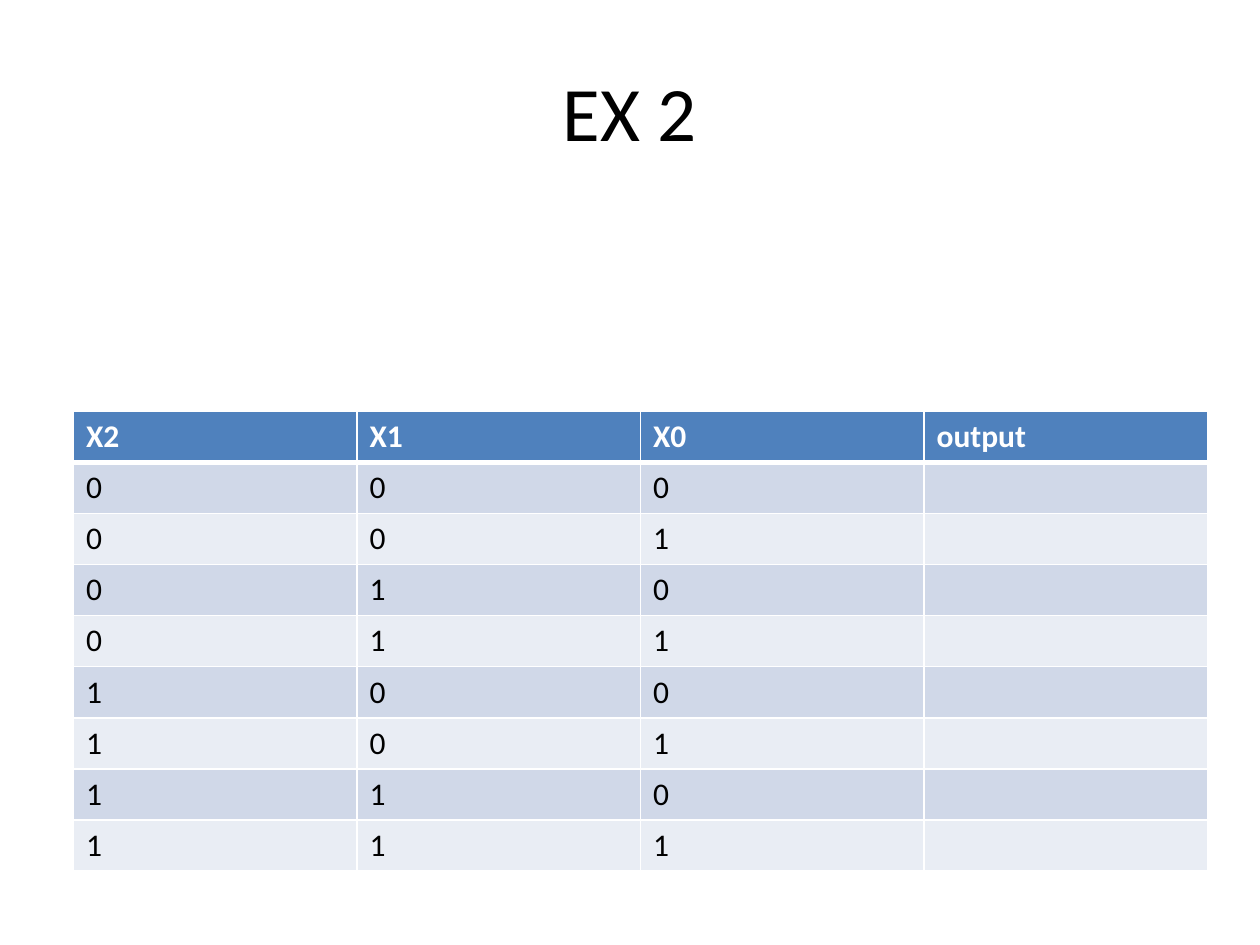
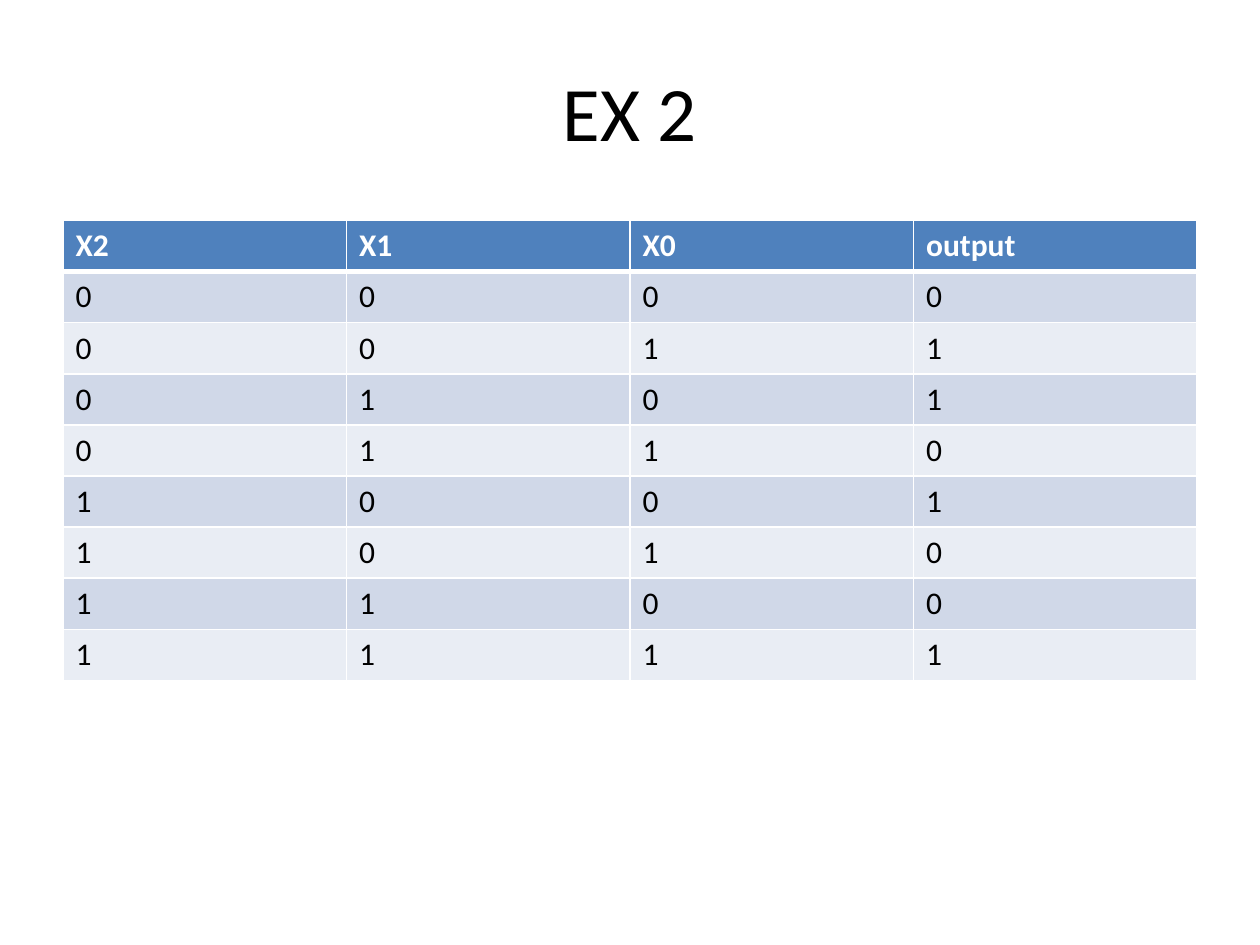
from dataclasses import dataclass
from itertools import product

from lxml import etree
from pptx import Presentation
from pptx.dml.color import RGBColor
from pptx.enum import text
from pptx.oxml import ns
from pptx.util import Pt


@dataclass(frozen=True)
class Theme:
    font: str = "Calibri"
    ink: str = "000000"
    paper: str = "FFFFFF"
    header: str = "4F81BD"
    bands: tuple = ("D0D8E8", "E9EDF4")
    title_size: float = 44
    cell_size: float = 18
    rule: float = 1
    header_rule: float = 3


class Deck:
    """Holds the theme and the slide being filled."""

    def __init__(self, theme):
        self.theme = theme
        self.prs = Presentation()
        self.prs.slide_width, self.prs.slide_height = Pt(720), Pt(540)
        self.slide = None

    def add_slide(self):
        self.slide = self.prs.slides.add_slide(self.prs.slide_layouts[6])

    def add_words(self, paragraph, words, size, color, bold=False):
        run = paragraph.add_run()
        run.text = words
        style = {"name": self.theme.font, "size": Pt(size), "bold": bold}
        for key, value in style.items():
            setattr(run.font, key, value)
        run.font.color.rgb = RGBColor.from_string(color)

    def title(self, words):
        heading = self.slide.shapes.add_textbox(Pt(36), Pt(18), Pt(648), Pt(90))
        frame = heading.text_frame
        layout = {"word_wrap": True, "vertical_anchor": text.MSO_ANCHOR.MIDDLE}
        for key, value in layout.items():
            setattr(frame, key, value)
        paragraph = frame.paragraphs[0]
        paragraph.alignment = text.PP_ALIGN.CENTER
        self.add_words(paragraph, words, self.theme.title_size, self.theme.ink)

    def border(self, cell, side, width):
        line = etree.SubElement(cell._tc.get_or_add_tcPr(), ns.qn(f"a:ln{side}"), w=str(Pt(width)))
        fill = etree.SubElement(line, ns.qn("a:solidFill"))
        etree.SubElement(fill, ns.qn("a:srgbClr"), val=self.theme.paper)

    def table(self, rows, left, top, column_width=162, row_height=29.2):
        """Draw rows of strings; the first row is the header."""
        theme = self.theme
        columns = len(rows[0])
        grid = self.slide.shapes.add_table(
            len(rows), columns, Pt(left), Pt(top),
            Pt(column_width * columns), Pt(row_height * len(rows))).table
        for row in grid.rows:
            row.height = Pt(row_height)
        for r, c in product(range(len(rows)), range(columns)):
            cell, is_header = grid.cell(r, c), r == 0
            widths = {"L": theme.rule, "R": theme.rule,
                      "T": theme.header_rule if r == 1 else theme.rule,
                      "B": theme.header_rule if is_header else theme.rule}
            for side, width in widths.items():
                self.border(cell, side, width)
            cell.fill.solid()
            cell.fill.fore_color.rgb = RGBColor.from_string(
                theme.header if is_header else theme.bands[(r - 1) % 2])
            if rows[r][c]:
                self.add_words(cell.text_frame.paragraphs[0], rows[r][c], theme.cell_size,
                               theme.paper if is_header else theme.ink, is_header)


def truth_table(output):
    """List every input of three bits with the output for it."""
    header = ["X2", "X1", "X0", "output"]
    return [header] + [[*map(str, bits), output(bits)] for bits in product((0, 1), repeat=3)]


def unanswered(bits):
    return ""


def odd_parity(bits):
    return str(sum(bits) % 2)


def main():
    deck = Deck(Theme())
    for output, left, top in ((unanswered, 42, 235), (odd_parity, 36, 126)):
        deck.add_slide()
        deck.title("EX 2")
        deck.table(truth_table(output), left, top)
    deck.prs.save("out.pptx")


if __name__ == "__main__":
    main()
